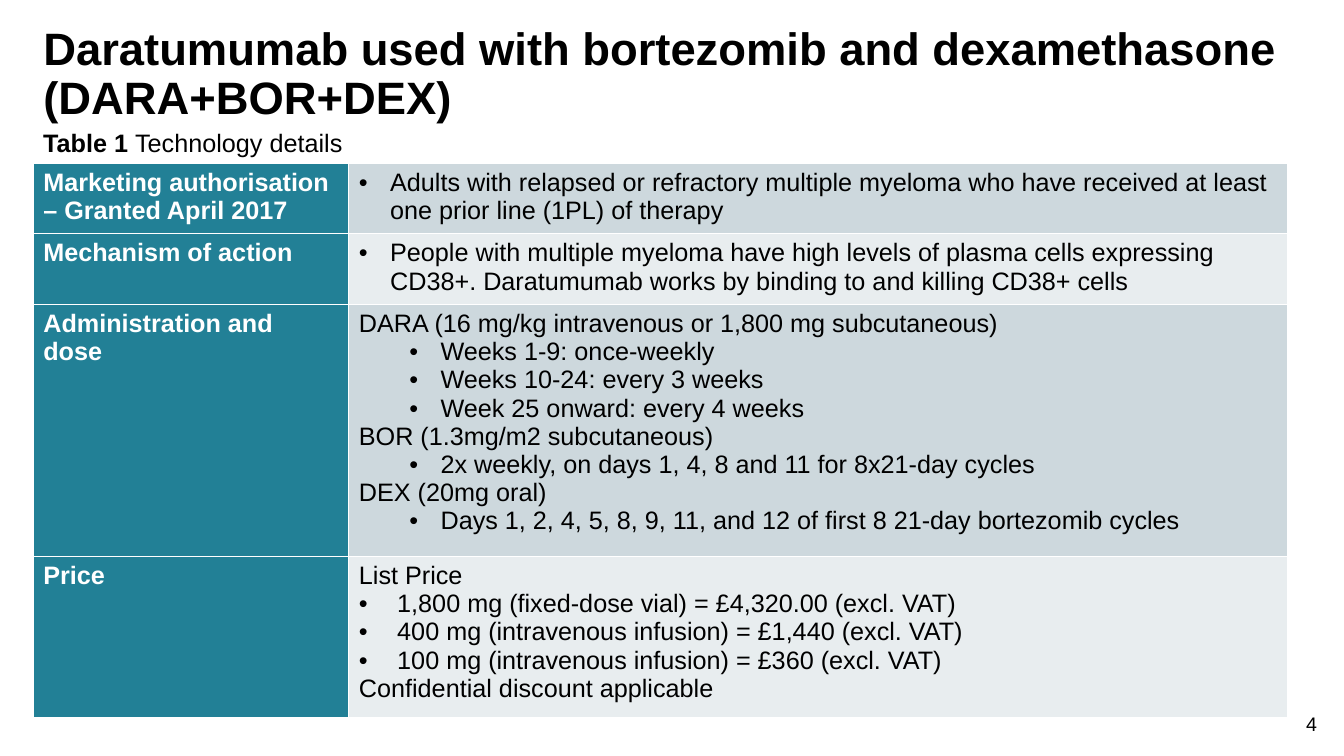
from dataclasses import dataclass
from lxml.etree import SubElement
from pptx import Presentation
from pptx.dml.color import RGBColor as RGB
from pptx.enum.text import MSO_ANCHOR as ANCHOR, MSO_AUTO_SIZE as AUTOSIZE, PP_ALIGN as ALIGN
from pptx.oxml.ns import qn
from pptx.util import Emu, Pt


@dataclass(frozen=True)
class Theme:
    font: str = "Arial"
    black: str = "000000"
    white: str = "FFFFFF"
    teal: str = "228096"
    bands: tuple = ("CDD8DD", "E8EDEF")
    title: float = 32.4
    body: int = 18
    number: int = 14
    border: int = 1


THEME = Theme()
PX = 9144
HANG = 31
NESTED = dict(left=81, hang=HANG, level=1)
TOP = dict(left=HANG, hang=HANG)
PRICE = dict(left=38, hang=38)

ROWS = [
    (69, "Marketing authorisation – Granted April 2017", [
        ("Adults with relapsed or refractory multiple myeloma who have received "
         "at least one prior line (1PL) of therapy", TOP)]),
    (70, "Mechanism of action", [
        ("People with multiple myeloma have high levels of plasma cells expressing CD38+. "
         "Daratumumab works by binding to and killing CD38+ cells", TOP)]),
    (250, "Administration and dose", [
        ("DARA (16 mg/kg intravenous or 1,800 mg subcutaneous)", None),
        ("Weeks 1-9: once-weekly", NESTED),
        ("Weeks 10-24: every 3 weeks", NESTED),
        ("Week 25 onward: every 4 weeks", NESTED),
        ("BOR (1.3mg/m2 subcutaneous)", None),
        ("2x weekly, on days 1, 4, 8 and 11 for 8x21-day cycles", NESTED),
        ("DEX (20mg oral)", None),
        ("Days 1, 2, 4, 5, 8, 9, 11, and 12 of first 8 21-day bortezomib cycles", NESTED)]),
    (160, "Price", [
        ("List Price", None),
        ("1,800 mg (fixed-dose vial) = £4,320.00 (excl. VAT)", PRICE),
        ("400 mg (intravenous infusion) = £1,440 (excl. VAT)", PRICE),
        ("100 mg (intravenous infusion) = £360 (excl. VAT)", PRICE),
        ("Confidential discount applicable", None)]),
]


class Deck:
    """Holds the theme and the current slide, and draws each kind of element."""

    def __init__(self, theme, width, height):
        self.theme = theme
        self.prs = Presentation()
        self.prs.slide_width, self.prs.slide_height = self.px(width, height)
        self.s = self.prs.slides.add_slide(self.prs.slide_layouts[5])

    def px(self, *lengths):
        return [Emu(n * PX) for n in lengths]

    def set(self, target, **values):
        for name, value in values.items():
            setattr(target, name, value)

    def run(self, p, text, size, color, bold=False):
        r = p.add_run()
        r.text = text
        self.set(r.font, name=self.theme.font, size=Pt(size), bold=bold)
        r.font.color.rgb = RGB.from_string(color)

    def title(self, box, text):
        sp = self.s.shapes.title
        self.set(sp, **dict(zip(("left", "top", "width", "height"), self.px(*box))))
        self.set(sp.text_frame, word_wrap=True, auto_size=AUTOSIZE.NONE,
                 vertical_anchor=ANCHOR.TOP)
        p = sp.text_frame.paragraphs[0]
        self.set(p, alignment=ALIGN.LEFT, line_spacing=0.9)
        self.run(p, text, self.theme.title, self.theme.black, True)

    def text(self, box, runs, size, align=ALIGN.LEFT, wrap=True):
        tf = self.s.shapes.add_textbox(*self.px(*box)).text_frame
        tf.word_wrap = wrap
        p = tf.paragraphs[0]
        p.alignment = align
        for text, bold in runs:
            self.run(p, text, size, self.theme.black, bold)

    def bullet(self, p, left, hang, level=0):
        p.level = level
        pPr = p._p.get_or_add_pPr()
        pPr.set("marL", str(left * PX))
        pPr.set("indent", str(-hang * PX))
        SubElement(pPr, qn("a:buFont"), typeface=self.theme.font)
        SubElement(pPr, qn("a:buChar"), char="•")

    def cell(self, cell, lines, fill, color, bold=False):
        tcPr = cell._tc.get_or_add_tcPr()
        for side in ("lnL", "lnR", "lnT", "lnB"):
            ln = SubElement(tcPr, qn(f"a:{side}"), w=str(Pt(self.theme.border)))
            SubElement(SubElement(ln, qn("a:solidFill")), qn("a:srgbClr"), val=self.theme.white)
        cell.fill.solid()
        cell.fill.fore_color.rgb = RGB.from_string(fill)
        tf = cell.text_frame
        for i, (text, indent) in enumerate(lines):
            p = tf.add_paragraph() if i else tf.paragraphs[0]
            if indent:
                self.bullet(p, **indent)
            self.run(p, text, self.theme.body, color, bold)

    def table(self, left, top, widths, rows):
        heights = [height for height, _, _ in rows]
        box = self.px(left, top, sum(widths), sum(heights))
        table = self.s.shapes.add_table(len(rows), len(widths), *box).table
        self.set(table, first_row=False, horz_banding=False)
        for column, width in zip(table.columns, self.px(*widths)):
            column.width = width
        for i, (height, label, lines) in enumerate(rows):
            table.rows[i].height = Emu(height * PX)
            self.cell(table.cell(i, 0), [(label, None)], self.theme.teal, self.theme.white, True)
            self.cell(table.cell(i, 1), lines, self.theme.bands[i % 2], self.theme.black)


def main():
    deck = Deck(THEME, 1333, 750)
    deck.title((33, 21, 1285, 112), "Daratumumab used with bortezomib and dexamethasone (DARA+BOR+DEX)")
    deck.text((33, 121, 320, 40), [("Table 1 ", True), ("Technology details", False)],
              THEME.body, wrap=False)
    deck.table(33, 162, (313, 931), ROWS)
    deck.text((1265, 701, 51, 40), [("4", False)], THEME.number, ALIGN.RIGHT)
    deck.prs.save("out.pptx")


if __name__ == "__main__":
    main()
